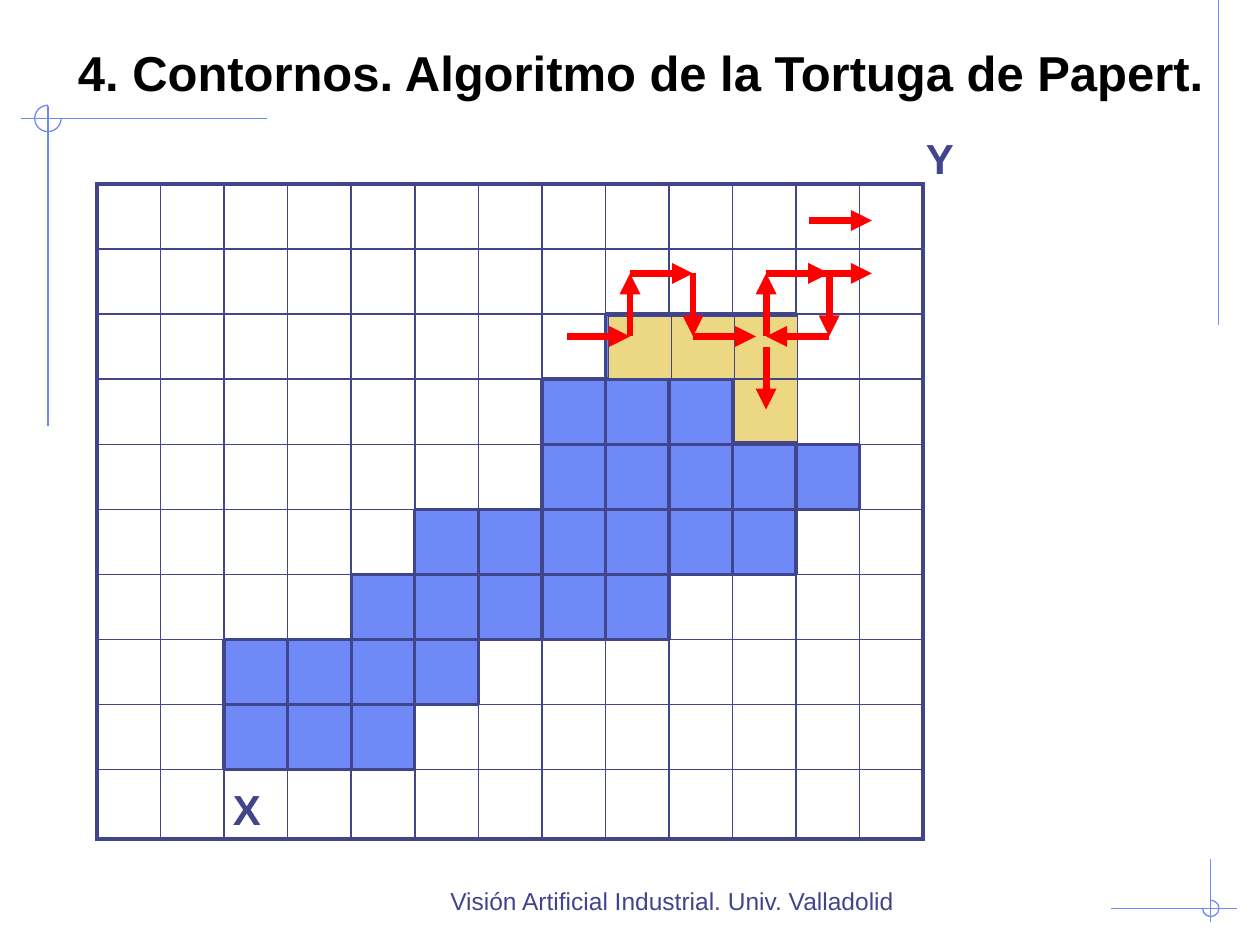
from itertools import pairwise

from lxml.etree import SubElement
from pptx import Presentation
from pptx.dml.color import RGBColor
from pptx.enum.shapes import MSO_CONNECTOR, MSO_SHAPE
from pptx.enum.text import MSO_ANCHOR, PP_ALIGN
from pptx.oxml.ns import qn
from pptx.util import Inches, Pt

COLORS = {"ink": "40458C", "blue": "6F89F7", "sand": "ECD882", "red": "FF0000", "black": "000000"}
REGION = {2: (8, 10), 3: (7, 10), 4: (7, 11), 5: (5, 10), 6: (4, 8), 7: (2, 5), 8: (2, 4)}
ROWS, COLUMNS = 10, 13
SIDES = {"L": (0, -1), "R": (0, 1), "T": (-1, 0), "B": (1, 0)}
STEP = 0.5


def color(name):
    """Return a palette colour."""
    return RGBColor.from_string(COLORS[name])


def add_line(slide, start, end, name, width, arrow=False):
    """Draw a straight line between two points, with an optional arrowhead."""
    line = slide.shapes.add_connector(MSO_CONNECTOR.STRAIGHT, *map(Inches, start + end))
    line.line.color.rgb = color(name)
    line.line.width = Pt(width)
    if arrow:
        SubElement(line.line._get_or_add_ln(), qn("a:tailEnd"), type="triangle")
    SubElement(line._element.spPr, qn("a:effectLst"))


def add_text(slide, box, text, size, name, bold=False, align=PP_ALIGN.LEFT, anchor=MSO_ANCHOR.TOP):
    """Place one line of text in a box."""
    frame = slide.shapes.add_textbox(*map(Inches, box)).text_frame
    frame.word_wrap = True
    frame.vertical_anchor = anchor
    paragraph = frame.paragraphs[0]
    paragraph.alignment = align
    run = paragraph.add_run()
    run.text = text
    run.font.name = "Arial"
    run.font.size = Pt(size)
    run.font.bold = bold
    run.font.color.rgb = color(name)


def add_crosshair(slide, center, reach, diameter, angles):
    """Draw crossing lines around a center, with a three-quarter circle."""
    x, y = center
    left, right, up, down = reach
    add_line(slide, (x - left, y), (x + right, y), "blue", 0.75)
    add_line(slide, (x, y - up), (x, y + down), "blue", 0.75)
    box = (x - diameter / 2, y - diameter / 2, diameter, diameter)
    arc = slide.shapes.add_shape(MSO_SHAPE.ARC, *map(Inches, box))
    arc.shadow.inherit = False
    arc.fill.background()
    arc.line.color.rgb = color("blue")
    arc.line.width = Pt(0.75)
    for index, angle in enumerate(angles):
        arc.adjustments[index] = angle * 0.6


def in_region(row, column):
    """Tell whether a cell belongs to the blue region."""
    first, last = REGION.get(row, (COLUMNS, -1))
    return first <= column <= last


def style_cell(cell, row, column):
    """Fill a cell and thicken the edges of the region and of the grid."""
    properties = cell._tc.get_or_add_tcPr()
    filled = in_region(row, column)
    for side, (down, across) in SIDES.items():
        near_row, near_column = row + down, column + across
        inside = 0 <= near_row < ROWS and 0 <= near_column < COLUMNS
        thick = filled or not inside or in_region(near_row, near_column)
        border = SubElement(properties, qn(f"a:ln{side}"), w=str(Pt(2.25 if thick else 1)))
        fill = SubElement(border, qn("a:solidFill"))
        SubElement(fill, qn("a:srgbClr"), val=COLORS["ink"])
    if filled:
        cell.fill.solid()
        cell.fill.fore_color.rgb = color("blue")
    else:
        cell.fill.background()


def add_grid(slide, left, top, width, height):
    """Build the pixel grid as a table, with its axis names."""
    frame = slide.shapes.add_table(ROWS, COLUMNS, *map(Inches, (left, top, width, height)))
    table = frame.table
    table.first_row = table.horz_banding = False
    last_height = 0.55
    for column in table.columns:
        column.width = Inches(width / COLUMNS)
    for row in table.rows:
        row.height = Inches((height - last_height) / (ROWS - 1))
    table.rows[ROWS - 1].height = Inches(last_height)
    for row in range(ROWS):
        for column in range(COLUMNS):
            style_cell(table.cell(row, column), row, column)
    add_text(slide, (left + 6.48, top - 0.46, 0.42, 0.5), "Y", 24, "ink", True)
    add_text(slide, (left + 0.98, top + 4.71, 0.42, 0.5), "X", 24, "ink", True)


def add_visited_cells(slide, left, top):
    """Mark the cells that the turtle has visited."""
    for column, row in [(2, 1), (2, 0), (1, 0), (0, 0)]:
        box = (left + column * STEP, top + row * STEP, STEP, STEP)
        square = slide.shapes.add_shape(MSO_SHAPE.RECTANGLE, *map(Inches, box))
        square.shadow.inherit = False
        square.fill.solid()
        square.fill.fore_color.rgb = color("sand")
        square.line.color.rgb = color("ink")
        square.line.width = Pt(0.75)


def add_walk(slide, left, top, moves):
    """Draw one arrow per move: R, L, U or D."""
    directions = {"R": (STEP, 0), "L": (-STEP, 0), "U": (0, -STEP), "D": (0, STEP)}
    points = [(left, top)]
    for move in moves:
        across, down = directions[move]
        points.append((points[-1][0] + across, points[-1][1] + down))
    for start, end in pairwise(points):
        add_line(slide, start, end, "red", 4, True)


def add_turtle_path(slide, left, top):
    """Draw the walks of the turtle over the visited cells."""
    add_visited_cells(slide, left + 0.33, top - 0.16)
    walks = [(0, 0, "RURDR"), (1.92, -0.92, "R"), (1.92, -0.5, "R"), (1.58, 0, "URDL"), (1.58, 0.08, "D")]
    for across, down, moves in walks:
        add_walk(slide, left + across, top + down, moves)


def add_decoration(slide, width):
    """Draw the thin lines in the corners of the slide."""
    add_line(slide, (width - 0.33, 0), (width - 0.33, 2.58), "blue", 0.75)
    add_crosshair(slide, (0.38, 0.94), (0.21, 1.74, 0.1, 2.44), 0.21, (0, 270))
    add_crosshair(slide, (width - 0.39, 7.21), (0.79, 0.21, 0.39, 0.11), 0.13, (270, 180))


def main():
    """Build the slide and save it."""
    presentation = Presentation()
    presentation.slide_width = Inches(10)
    presentation.slide_height = Inches(7.5)
    slide = presentation.slides.add_slide(presentation.slide_layouts[6])
    add_decoration(slide, 10)
    footer = "Visión Artificial Industrial. Univ. Valladolid"
    add_text(slide, (1.27, 6.98, 8.13, 0.52), footer, 14, "ink", align=PP_ALIGN.CENTER)
    add_grid(slide, 0.77, 1.46, 6.56, 5.2)
    add_turtle_path(slide, 4.5, 2.67)
    title = "4. Contornos. Algoritmo de la Tortuga de Papert."
    add_text(slide, (0.52, 0.18, 9.48, 0.67), title, 28, "black", True, anchor=MSO_ANCHOR.BOTTOM)
    presentation.save("out.pptx")


if __name__ == "__main__":
    main()
